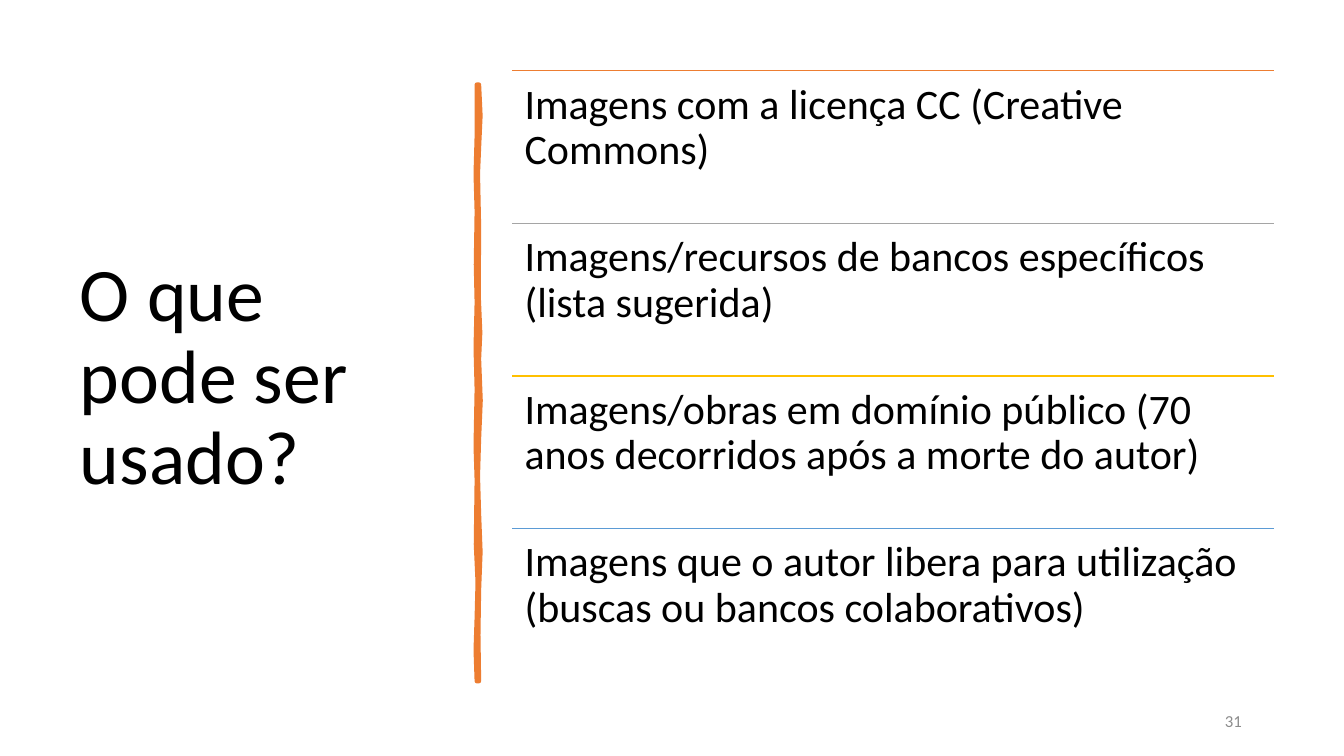
from dataclasses import dataclass

from lxml.etree import SubElement
from pptx import Presentation
from pptx.dml.color import RGBColor
from pptx.enum.shapes import MSO_CONNECTOR as Connector
from pptx.enum.text import MSO_ANCHOR as Anchor, PP_ALIGN as Align
from pptx.oxml.ns import qn
from pptx.util import Inches, Pt


@dataclass(frozen=True)
class Theme:
    font: str = "Calibri"
    text: str = "000000"
    muted: str = "8C8C8C"
    brush: str = "ED7D31"
    rules: tuple = ("ED7D31", "A5A5A5", "FFC000", "5B9BD5")
    title_size: float = 54
    item_size: float = 30
    number_size: float = 12
    rule_width: float = 1
    brush_width: float = 3.25


class SlideBuilder:
    """Draws themed elements on a slide split into 100 columns and 100 rows."""

    def __init__(self, presentation, theme):
        self.theme = theme
        self.slide = presentation.slides.add_slide(presentation.slide_layouts[6])
        self.column = presentation.slide_width / 100
        self.row = presentation.slide_height / 100

    def place(self, column, row):
        return round(column * self.column), round(row * self.row)

    def text(self, text, column, row, columns, rows, size, color=None,
             anchor=Anchor.MIDDLE, align=Align.LEFT, spacing=1.0, after=0, inset=None):
        box = self.slide.shapes.add_textbox(*self.place(column, row), *self.place(columns, rows))
        frame = box.text_frame
        frame.word_wrap = True
        frame.vertical_anchor = anchor
        if inset is not None:
            frame.margin_left = frame.margin_right = Inches(inset)
            frame.margin_top = frame.margin_bottom = Inches(inset)
        paragraph = frame.paragraphs[0]
        paragraph.text = text
        paragraph.alignment = align
        paragraph.line_spacing = spacing
        paragraph.space_after = Pt(after)
        paragraph.font.name = self.theme.font
        paragraph.font.size = Pt(size)
        paragraph.font.color.rgb = RGBColor.from_string(color or self.theme.text)

    def rule(self, column, row, columns, color):
        line = self.slide.shapes.add_connector(
            Connector.STRAIGHT, *self.place(column, row), *self.place(column + columns, row))
        line.line.color.rgb = RGBColor.from_string(color)
        line.line.width = Pt(self.theme.rule_width)
        SubElement(line._element.spPr, qn("a:effectLst"))

    def brush(self, points):
        start, *rest = [self.place(*point) for point in points]
        builder = self.slide.shapes.build_freeform(*start)
        builder.add_line_segments(rest, close=True)
        stroke = builder.convert_to_shape()
        stroke.shadow.inherit = False
        color = RGBColor.from_string(self.theme.brush)
        stroke.fill.solid()
        stroke.fill.fore_color.rgb = color
        stroke.line.color.rgb = color
        stroke.line.width = Pt(self.theme.brush_width)
        SubElement(stroke._element.spPr.find(qn("a:ln")), qn("a:round"))


ITEMS = (
    "Imagens com a licença CC (Creative Commons)",
    "Imagens/recursos de bancos específicos (lista sugerida)",
    "Imagens/obras em domínio público (70 anos decorridos após a morte do autor)",
    "Imagens que o autor libera para utilização (buscas ou bancos colaborativos)",
)
LIST_LEFT, LIST_TOP, LIST_WIDTH, ITEM_HEIGHT = 38.13, 9.36, 56.64, 20.18

BRUSH_RIGHT = (
    (35.63, 11.2), (35.74, 15.3), (35.63, 19.5), (35.55, 23), (35.63, 30),
    (35.6, 39), (35.72, 44), (35.63, 47.5), (35.75, 53), (35.63, 58),
    (35.55, 63), (35.63, 68), (35.74, 73), (35.63, 78), (35.58, 84), (35.63, 90.1),
)
BRUSH_LEFT = (
    (35.48, 90.1), (35.4, 86), (35.48, 81.7), (35.55, 77), (35.42, 72),
    (35.48, 63.5), (35.4, 59), (35.48, 51.5), (35.4, 46), (35.48, 40),
    (35.42, 35), (35.48, 28), (35.4, 23), (35.48, 18), (35.48, 11.2),
)


def main():
    presentation = Presentation()
    presentation.slide_width, presentation.slide_height = Inches(13.33), Inches(7.5)
    theme = Theme()
    builder = SlideBuilder(presentation, theme)

    builder.text("O que pode ser usado?", 5.21, LIST_TOP, 28.06, 81.47,
                 theme.title_size, spacing=0.9)
    builder.brush(BRUSH_RIGHT + BRUSH_LEFT)
    builder.text("31", 70.64, 92.67, 22.5, 5.33, theme.number_size,
                 color=theme.muted, align=Align.RIGHT, after=6)
    for index, (item, color) in enumerate(zip(ITEMS, theme.rules)):
        top = LIST_TOP + index * ITEM_HEIGHT
        builder.rule(LIST_LEFT, top, LIST_WIDTH, color)
        builder.text(item, LIST_LEFT, top, LIST_WIDTH, ITEM_HEIGHT, theme.item_size,
                     anchor=Anchor.TOP, spacing=0.9, inset=0.12)

    presentation.save("out.pptx")


if __name__ == "__main__":
    main()
